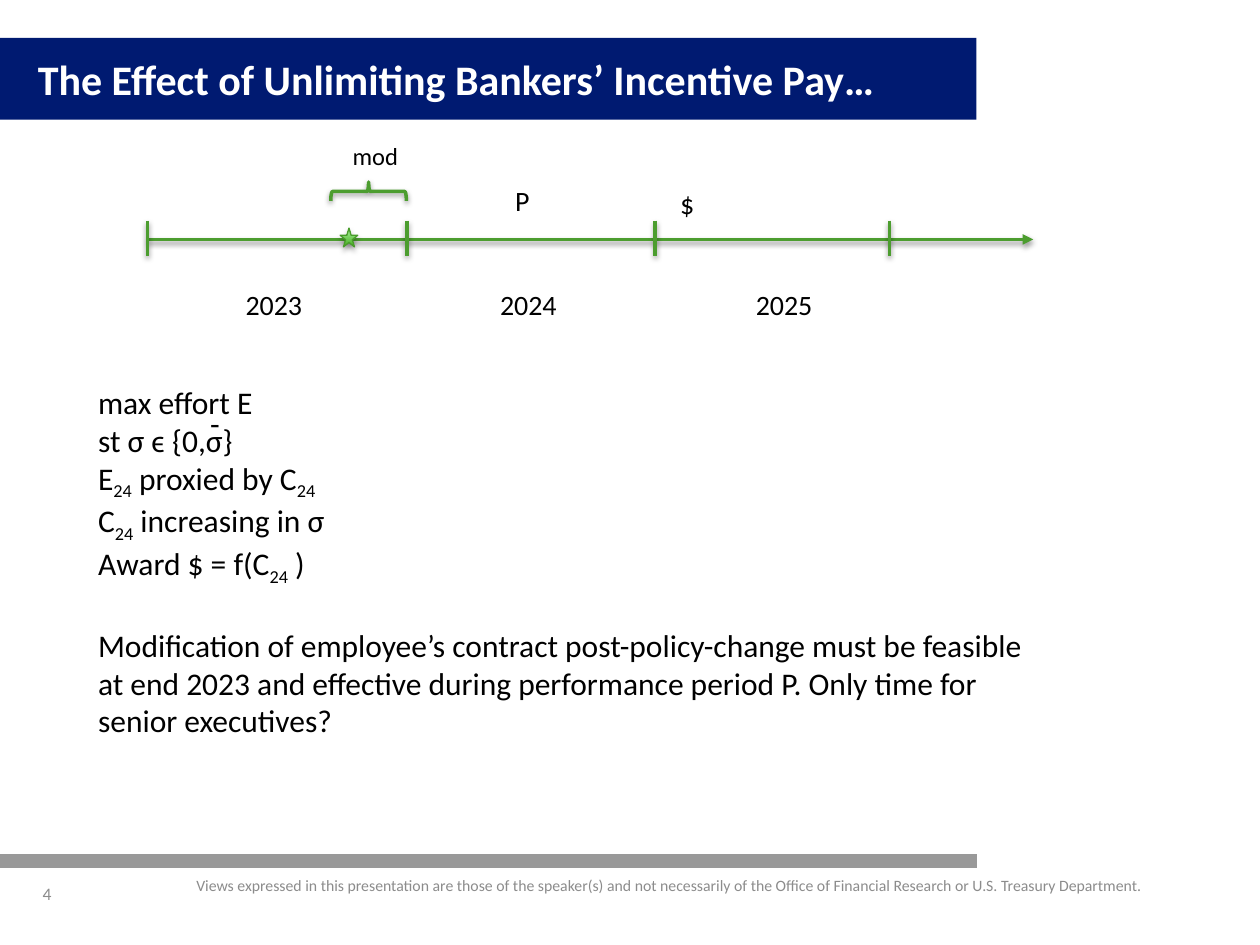
from dataclasses import dataclass

from lxml import etree
from pptx import Presentation
from pptx.dml.color import RGBColor
from pptx.enum.shapes import MSO_CONNECTOR, MSO_SHAPE
from pptx.enum.text import MSO_ANCHOR, MSO_AUTO_SIZE, PP_ALIGN
from pptx.oxml.ns import qn
from pptx.util import Pt

STRAIGHT = MSO_CONNECTOR.STRAIGHT
STAR = MSO_SHAPE.STAR_5_POINT
BRACE = MSO_SHAPE.LEFT_BRACE
TOP, MIDDLE = MSO_ANCHOR.TOP, MSO_ANCHOR.MIDDLE
LEFT, CENTER = PP_ALIGN.LEFT, PP_ALIGN.CENTER
FIXED = MSO_AUTO_SIZE.NONE
SCALE = 9144
TITLE_ONLY = 5


@dataclass(frozen=True)
class Theme:
    font: str = "Calibri"
    navy: str = "001A71"
    white: str = "FFFFFF"
    black: str = "000000"
    rule: str = "999999"
    muted: str = "8C8C8C"
    green: str = "4C9D2F"
    star_line: str = "499C2B"
    star_fill: tuple = ("44AE1E", "ADF2A1")
    title: int = 24
    body: int = 18
    label: int = 16
    small_label: int = 14
    number: int = 10
    footer: int = 9


@dataclass(frozen=True)
class Box:
    left: int
    top: int
    width: int
    height: int

    def inner(self, left, top, width, height):
        return Box(self.left + left, self.top + top, width, height)

    def emu(self):
        return [px(value) for value in (self.left, self.top, self.width, self.height)]


THEME = Theme()


def px(value):
    return value * SCALE


def color(value):
    return RGBColor.from_string(value)


def apply(target, values):
    for name, value in values.items():
        setattr(target, name, value)


def style_font(font, size, ink, bold=False):
    apply(font, {"name": THEME.font, "size": Pt(size), "bold": bold})
    font.color.rgb = color(ink)


def add_text(page, box, paragraphs, size, ink=THEME.black, align=LEFT, anchor=TOP, inset=(10, 5), wrap=True):
    frame = page.shapes.add_textbox(*box.emu()).text_frame
    across, down = (px(value) for value in inset)
    apply(frame, {"word_wrap": wrap, "auto_size": FIXED, "vertical_anchor": anchor,
                  "margin_left": across, "margin_right": across,
                  "margin_top": down, "margin_bottom": down})
    for index, pieces in enumerate(paragraphs):
        para = frame.paragraphs[0] if index == 0 else frame.add_paragraph()
        para.alignment = align
        for position, piece in enumerate(pieces):
            span = para.add_run()
            span.text = piece
            style_font(span.font, size, ink)
            if position % 2:
                span.font._element.set("baseline", "-25000")
    return frame


def set_shadow(shape, opacity=0, distance=0.0):
    properties = shape._element.spPr
    for old in properties.findall(qn("a:effectLst")):
        properties.remove(old)
    effects = etree.SubElement(properties, qn("a:effectLst"))
    if opacity:
        shadow = etree.SubElement(effects, qn("a:outerShdw"), blurRad=str(Pt(3.1)),
                                  dist=str(Pt(distance)), dir="5400000", rotWithShape="0")
        ink = etree.SubElement(shadow, qn("a:srgbClr"), val=THEME.black)
        etree.SubElement(ink, qn("a:alpha"), val=str(opacity * 1000))


def style_line(shape, ink, width):
    shape.line.color.rgb = color(ink)
    shape.line.width = Pt(width)


def add_line(page, start, end, ink=THEME.green, width=2.0, arrow=False, shadow=(38, 1.6)):
    line = page.shapes.add_connector(STRAIGHT, *(px(value) for value in start + end))
    style_line(line, ink, width)
    if arrow:
        etree.SubElement(line.line._get_or_add_ln(), qn("a:tailEnd"), type="triangle")
    set_shadow(line, *shadow)


def add_title(page, box):
    title = page.shapes.title
    apply(title, dict(zip(("left", "top", "width", "height"), box.emu())))
    title.fill.solid()
    title.fill.fore_color.rgb = color(THEME.navy)
    frame = title.text_frame
    frame.text = "The Effect of Unlimiting Bankers’ Incentive Pay…"
    apply(frame, {"word_wrap": True, "auto_size": FIXED, "vertical_anchor": MIDDLE,
                  "margin_left": px(30), "margin_right": px(30),
                  "margin_top": px(5), "margin_bottom": px(5)})
    para = frame.paragraphs[0]
    para.alignment = LEFT
    style_font(para.runs[0].font, THEME.title, THEME.white, True)


def add_timeline(page, box):
    axis = box.top + 83
    add_line(page, (box.left, axis), (box.left + box.width, axis), arrow=True)
    for offset in (0, 206, 403, 589):
        tick = box.left + offset
        add_line(page, (tick, axis - 15), (tick, axis + 13))

    star = page.shapes.add_shape(STAR, *box.inner(153, 74, 14, 15).emu())
    star.fill.gradient()
    star.fill.gradient_angle = 90
    for stop, ink in zip(star.fill.gradient_stops, THEME.star_fill):
        stop.color.rgb = color(ink)
    style_line(star, THEME.star_line, 0.75)
    set_shadow(star, 35, 1.8)

    brace = page.shapes.add_shape(BRACE, *box.inner(168, 15, 15, 60).emu())
    brace.rotation = 90
    brace.fill.background()
    style_line(brace, THEME.green, 2)
    set_shadow(brace, 38, 1.6)

    labels = [(str(2023 + index), round(68 + index * 202.5), 116, 68, 37, THEME.label) for index in range(3)]
    labels += [
        ("mod", 153, 0, 60, 34, THEME.small_label),
        ("P", 282, 34, 43, 37, THEME.label),
        ("$", 413, 36, 28, 37, THEME.label),
    ]
    for text, left, top, width, height, size in labels:
        add_text(page, box.inner(left, top, width, height), [[text]], size)


def add_model(page, box):
    paragraphs = [
        ["max effort E"],
        ["st σ ϵ {0,σ}"],
        ["E", "24", " proxied by C", "24"],
        ["C", "24", " increasing in σ"],
        ["Award $ = f(C", "24", " )"],
        ["Modification of employee’s contract post-policy-change must be feasible at end 2023 "
         "and effective during performance period P. Only time for senior executives?"],
    ]
    frame = add_text(page, box, paragraphs, THEME.body)
    frame.paragraphs[-1].space_before = Pt(22)
    add_text(page, box.inner(89, 17, 28, 40), [["-"]], THEME.body, wrap=False)


def add_footer(page, box):
    add_line(page, (box.left, box.top), (box.left + 775, box.top), THEME.rule, 8, shadow=())
    add_text(page, box.inner(154, 12, 753, 29),
             [["Views expressed in this presentation are those of the speaker(s) and not necessarily "
               "of the Office of Financial Research or U.S. Treasury Department."]],
             THEME.footer, THEME.muted, CENTER, inset=(0, 0))
    add_text(page, box.inner(24, 12, 57, 29), [["4"]], THEME.number, THEME.muted, anchor=MIDDLE)


def main():
    deck = Presentation()
    apply(deck, {"slide_width": px(1000), "slide_height": px(750)})
    page = deck.slides.add_slide(deck.slide_layouts[TITLE_ONLY])
    add_footer(page, Box(0, 683, 1000, 67))
    add_title(page, Box(0, 30, 775, 65))
    add_timeline(page, Box(117, 107, 703, 153))
    add_model(page, Box(68, 299, 775, 303))
    deck.save("out.pptx")


if __name__ == "__main__":
    main()
